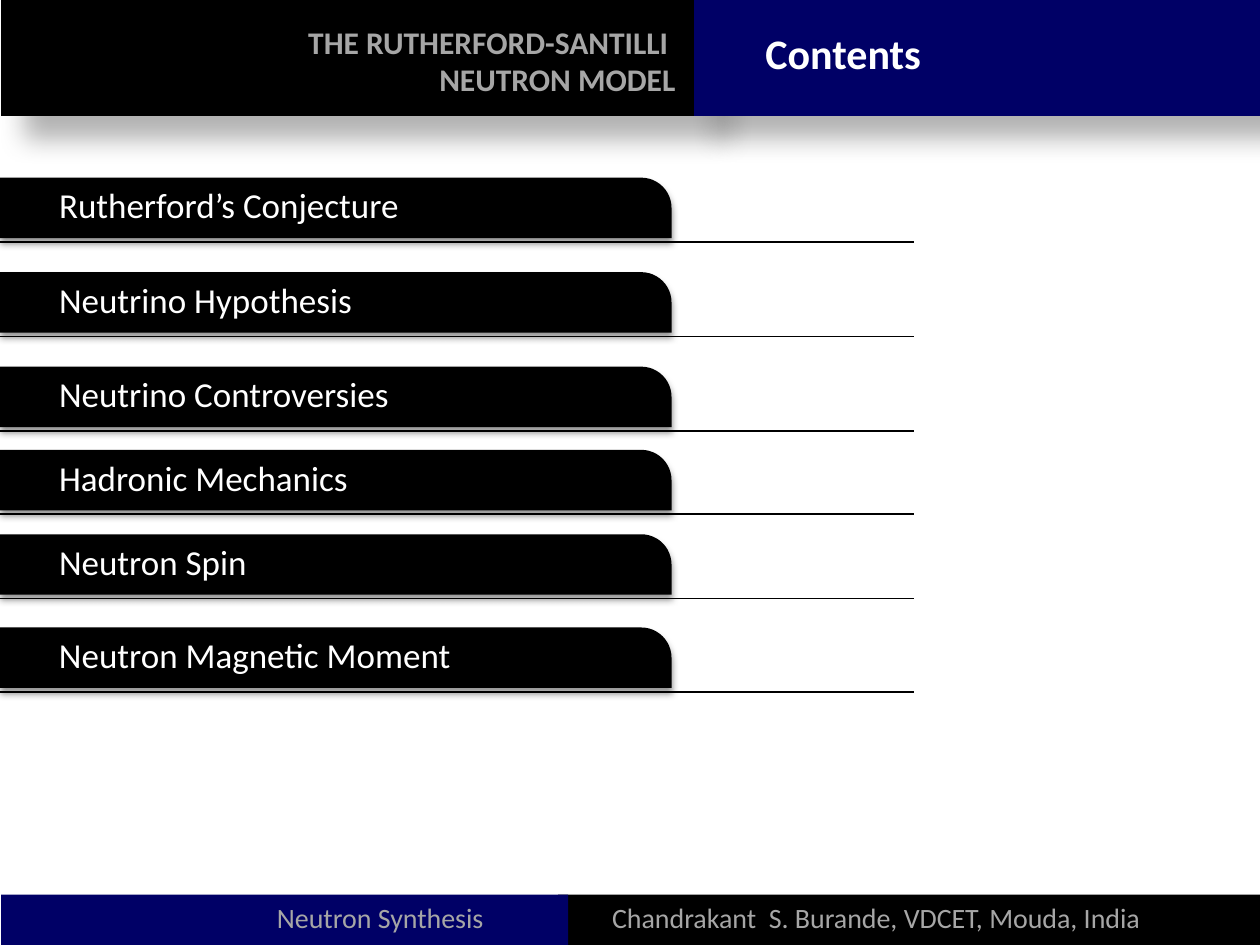
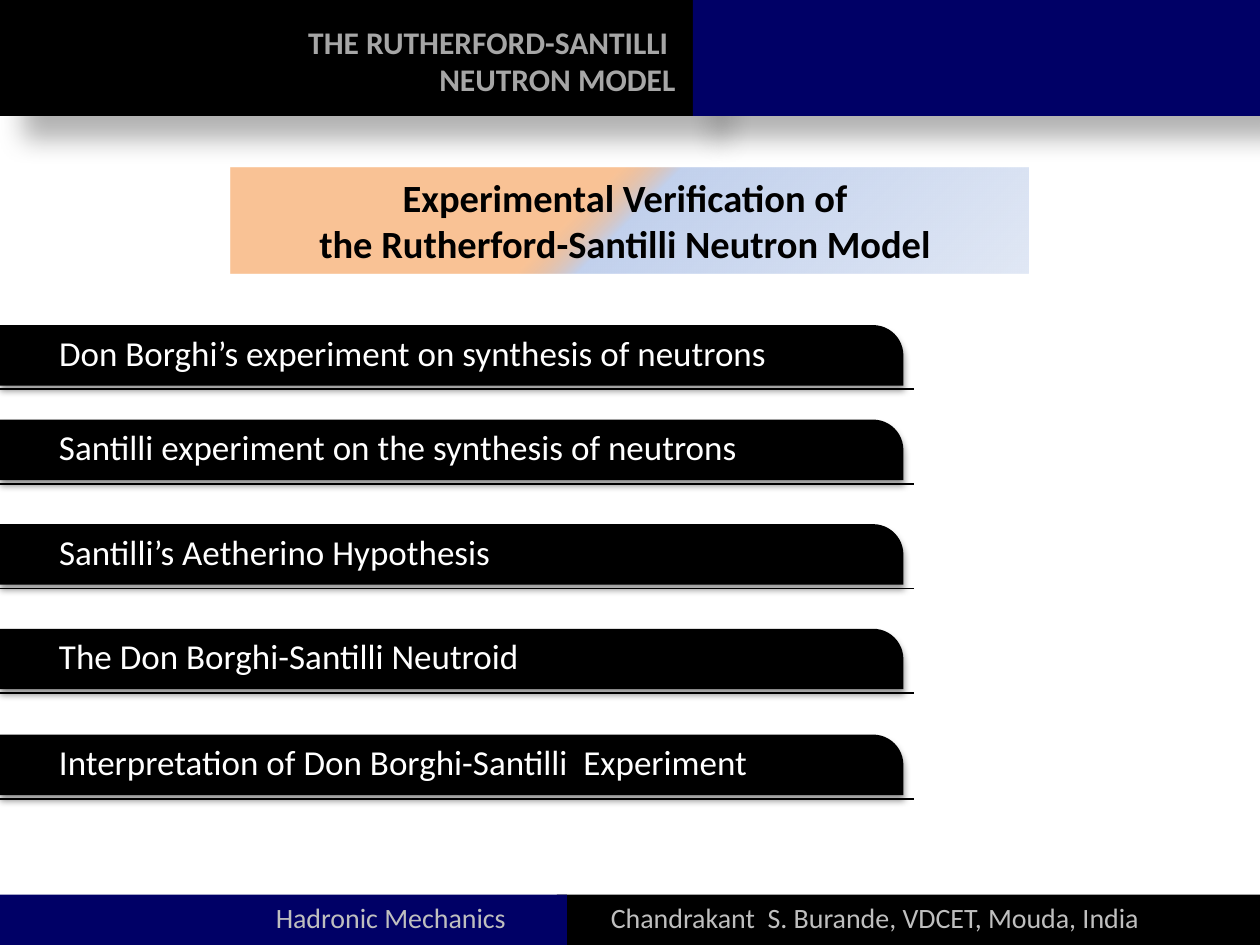
from lxml import etree
from pptx import Presentation
from pptx.dml.color import RGBColor
from pptx.enum.shapes import MSO_CONNECTOR, MSO_SHAPE as SHAPE
from pptx.enum.text import MSO_ANCHOR as ANCHOR, MSO_AUTO_SIZE as FIT, PP_ALIGN as ALIGN
from pptx.oxml import parse_xml
from pptx.oxml.ns import nsdecls, qn
from pptx.util import Inches, Pt

BLACK = RGBColor(0x00, 0x00, 0x00)
NAVY = RGBColor(0x00, 0x00, 0x66)
WHITE = RGBColor(0xFF, 0xFF, 0xFF)
GREY = RGBColor(0xA6, 0xA6, 0xA6)
LIGHT_GREY = RGBColor(0xBF, 0xBF, 0xBF)
ORANGE = RGBColor(0xF7, 0x96, 0x46)
BLUE_TINT = RGBColor(0xC2, 0xD1, 0xED)
PALE_BLUE = RGBColor(0xE1, 0xE8, 0xF5)

FONT = "Calibri"
BAND_SHADOW = (30, 15, 18, 45)
BAR_SHADOW = (40, 4, 3, 90)
WIDE, NARROW, OVERLAP = 5.58, 4.5, 0.08
BAR_HEIGHT, RULE_DROP, RULE_END = 0.48, 0.51, 7.25
MODEL = "THE RUTHERFORD-SANTILLI \nNEUTRON MODEL"
AUTHOR = "Chandrakant  S. Burande, VDCET, Mouda, India"
VERIFICATION = "Experimental Verification of \nthe Rutherford-Santilli Neutron Model "

CONTENTS = [
    (1.41, 2.92, "Rutherford’s Conjecture"),
    (2.16, 2.55, "Neutrino Hypothesis"),
    (2.91, 2.95, "Neutrino Controversies"),
    (3.57, 2.52, "Hadronic Mechanics"),
    (4.24, 1.71, "Neutron Spin"),
    (4.98, 3.34, "Neutron Magnetic Moment"),
]
EXPERIMENTS = [
    (2.58, 5.99, "Don Borghi’s experiment on synthesis of neutrons"),
    (3.33, 5.77, "Santilli experiment on the synthesis of neutrons"),
    (4.16, 3.75, "Santilli’s Aetherino Hypothesis"),
    (4.99, 3.97, "The Don Borghi-Santilli Neutroid"),
    (5.83, 6.46, "Interpretation of Don Borghi-Santilli  Experiment"),
]


def add_shadow(sp, alpha, blur, distance, angle):
    """Give a shape a black outer shadow."""
    sp.shadow.inherit = False
    effects = sp._element.spPr.find(qn("a:effectLst"))
    effects.append(parse_xml(
        f'<a:outerShdw {nsdecls("a")} blurRad="{Pt(blur)}" dist="{Pt(distance)}" '
        f'dir="{angle * 60000}" algn="tl" rotWithShape="0"><a:srgbClr val="{BLACK}">'
        f'<a:alpha val="{alpha * 1000}"/></a:srgbClr></a:outerShdw>'))


def add_block(slide, kind, box, color, shadow):
    """Draw a filled, unlined shape with a shadow."""
    sp = slide.shapes.add_shape(kind, *map(Inches, box))
    sp.fill.solid()
    sp.fill.fore_color.rgb = color
    sp.line.fill.background()
    add_shadow(sp, *shadow)
    return sp


def write(sp, text, size, color, bold=False, align=ALIGN.LEFT):
    """Fill a shape with evenly formatted text."""
    tf = sp.text_frame
    tf.text = text
    for p in tf.paragraphs:
        p.alignment = align
        p.font.name, p.font.size, p.font.bold = FONT, Pt(size), bold
        p.font.color.rgb = color


def add_label(slide, box, text, size, color, **style):
    """Add a one-line-per-paragraph text box."""
    sp = slide.shapes.add_textbox(*map(Inches, box))
    sp.text_frame.word_wrap = False
    sp.text_frame.auto_size = FIT.SHAPE_TO_FIT_TEXT
    write(sp, text, size, color, **style)


def add_header(slide, x):
    """Draw the two-tone header with the model's name."""
    add_block(slide, SHAPE.RECTANGLE, (x, 0, WIDE, 0.92), BLACK, BAND_SHADOW)
    add_block(slide, SHAPE.RECTANGLE, (x + WIDE - OVERLAP, 0, NARROW, 0.92), NAVY, BAND_SHADOW)
    add_label(slide, (2.31, 0.13, 3.15, 0.71), MODEL, 18, GREY, bold=True, align=ALIGN.RIGHT)


def add_footer(slide, x, topic, topic_width, color):
    """Draw the two-tone footer with the topic and the author."""
    y = 7.1
    add_block(slide, SHAPE.RECTANGLE, (x + NARROW - OVERLAP, y, WIDE, 0.4), BLACK, BAND_SHADOW)
    add_block(slide, SHAPE.RECTANGLE, (x, y, NARROW, 0.4), NAVY, BAND_SHADOW)
    add_label(slide, (x + 4.75, y, 4.44, 0.37), AUTHOR, 16, color)
    add_label(slide, (x + 2.09, y, topic_width, 0.37), topic, 16, color)


def add_topics(slide, topics, bar_width):
    """Draw each topic as a bar with a rule beneath it."""
    for y, label_width, text in topics:
        bar = add_block(slide, SHAPE.ROUND_1_RECTANGLE, (0, y, bar_width, BAR_HEIGHT),
                        BLACK, BAR_SHADOW)
        bar.adjustments[0] = 0.5
        add_label(slide, (0.37, y, label_width, 0.44), text, 20, WHITE)
        rule_y = Inches(y + RULE_DROP)
        rule = slide.shapes.add_connector(MSO_CONNECTOR.STRAIGHT, 0, rule_y,
                                          Inches(RULE_END), rule_y)
        rule.line.color.rgb = BLACK
        rule.line.width = Pt(1)
        etree.SubElement(rule._element.spPr, qn("a:effectLst"))


def place_title(slide, box, text, size, color, align, wrap):
    """Move the title to a box, in front of the bands."""
    title = slide.shapes.title
    title.left, title.top, title.width, title.height = map(Inches, box)
    tf = title.text_frame
    tf.word_wrap, tf.auto_size, tf.vertical_anchor = wrap, FIT.NONE, ANCHOR.TOP
    write(title, text, size, color, bold=True, align=align)
    slide.shapes._spTree.append(title._element)
    return title


def fill_title(title):
    """Give the title its orange to blue diagonal gradient."""
    stops = [(43, ORANGE, 56), (50, BLUE_TINT, 100), (100, PALE_BLUE, 100)]
    gs = "".join(
        f'<a:gs pos="{pos * 1000}"><a:srgbClr val="{color}">'
        f'<a:alpha val="{alpha * 1000}"/></a:srgbClr></a:gs>' for pos, color, alpha in stops)
    title._element.spPr.append(parse_xml(
        f'<a:gradFill {nsdecls("a")} rotWithShape="1"><a:gsLst>{gs}</a:gsLst>'
        f'<a:lin ang="{45 * 60000}" scaled="0"/></a:gradFill>'))


def build_contents(slide):
    """Build the contents slide."""
    add_header(slide, 0.01)
    add_footer(slide, 0.01, "Neutron Synthesis", 1.86, GREY)
    add_topics(slide, CONTENTS, 5.33)
    place_title(slide, (5.96, 0.17, 1.45, 0.5), "Contents", 24, WHITE, ALIGN.RIGHT, False)


def build_experiments(slide):
    """Build the experimental verification slide."""
    add_header(slide, 0)
    add_footer(slide, 0, "Hadronic Mechanics", 2.05, LIGHT_GREY)
    add_topics(slide, EXPERIMENTS, 7.17)
    title = place_title(slide, (1.83, 1.33, 6.33, 0.84), VERIFICATION, 22, BLACK,
                        ALIGN.CENTER, True)
    fill_title(title)


def main():
    """Build and save the presentation."""
    prs = Presentation()
    prs.slide_width, prs.slide_height = Inches(10), Inches(7.5)
    for build in (build_contents, build_experiments):
        build(prs.slides.add_slide(prs.slide_layouts[5]))
    prs.save("out.pptx")


if __name__ == "__main__":
    main()
